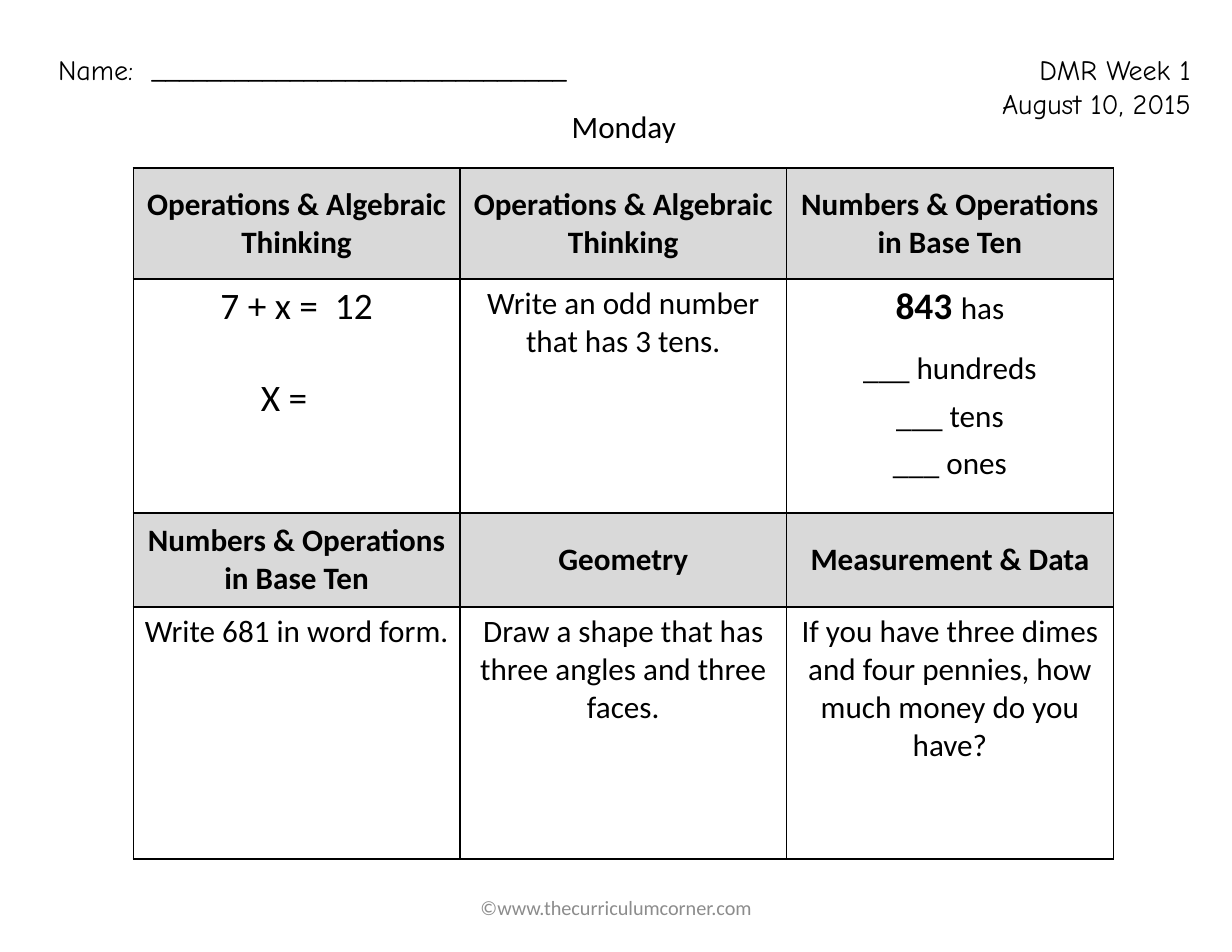
from dataclasses import dataclass

from lxml import etree
from pptx import Presentation
from pptx.dml.color import RGBColor
from pptx.enum.text import MSO_ANCHOR, PP_ALIGN
from pptx.oxml.ns import qn
from pptx.util import Inches, Pt

LEFT, CENTER, RIGHT = PP_ALIGN.LEFT, PP_ALIGN.CENTER, PP_ALIGN.RIGHT
TOP, MIDDLE = MSO_ANCHOR.TOP, MSO_ANCHOR.MIDDLE

COLORS = {"ink": "000000", "heading": "D9D9D9", "paper": "FFFFFF", "footer": "8C8C8C"}
BODY_FONT, HAND_FONT = "Calibri", "Comic Neue"
WIDTH, HEIGHT = Inches(11), Inches(8.5)
GRID_COLUMNS, GRID_ROWS = 44, 34
TABLE_COLUMNS = 3
TABLE_WIDTH = 35


@dataclass(frozen=True)
class Span:
    text: str
    size: float = 20
    bold: bool = False


@dataclass(frozen=True)
class Line:
    spans: tuple[Span, ...]
    before: float = 0
    after: float = 0
    right_indent: float = 0


@dataclass(frozen=True)
class Problem:
    heading: str
    lines: tuple[Line, ...]


def plain(text: str, size: float = 20, **spacing: float) -> Line:
    return Line((Span(text, size),), **spacing)


PROBLEM_ROWS = (
    (
        Problem("Operations & Algebraic Thinking", (
            plain("7 + x =  12", 24),
            plain("X =", 24, before=29.3, right_indent=0.9),
        )),
        Problem("Operations & Algebraic Thinking", (
            plain("Write an odd number that has 3 tens."),
        )),
        Problem("Numbers & Operations in Base Ten", (
            Line((Span("843 ", 24, True), Span("has"))),
            plain("___ hundreds", before=12.8, after=6),
            plain("___ tens", after=6),
            plain("___ ones", after=6),
        )),
    ),
    (
        Problem("Numbers & Operations in Base Ten", (plain("Write 681 in word form."),)),
        Problem("Geometry", (
            plain("Draw a shape that has three angles and three faces."),
        )),
        Problem("Measurement & Data", (
            plain("If you have three dimes and four pennies, how much money do you have?"),
        )),
    ),
)
ROW_HEIGHTS = (3.96, 8.36, 3.36, 9)


def across(columns: float) -> int:
    return round(WIDTH * columns / GRID_COLUMNS)


def down(rows: float) -> int:
    return round(HEIGHT * rows / GRID_ROWS)


def place(shape, left: float, top: float, width: float, height: float) -> None:
    shape.left, shape.top = across(left), down(top)
    shape.width, shape.height = across(width), down(height)


def write(frame, lines: tuple[Line, ...], *, font: str = BODY_FONT,
          color: str = "ink", align=LEFT) -> None:
    for index, line in enumerate(lines):
        para = frame.add_paragraph() if index else frame.paragraphs[0]
        para.alignment = align
        para.space_before, para.space_after = Pt(line.before), Pt(line.after)
        if line.right_indent:
            para._p.get_or_add_pPr().set("marR", str(across(line.right_indent)))
        for span in line.spans:
            run = para.add_run()
            run.text = span.text
            run.font.name = font
            run.font.size = Pt(span.size)
            run.font.bold = span.bold
            run.font.color.rgb = RGBColor.from_string(COLORS[color])


def add_label(page, area: tuple[float, ...], lines: tuple[Line, ...], *,
              wrap: bool = False, anchor=TOP, **text_format) -> None:
    box = page.shapes.add_textbox(0, 0, 0, 0)
    place(box, *area)
    box.text_frame.word_wrap = wrap
    box.text_frame.vertical_anchor = anchor
    write(box.text_frame, lines, **text_format)


def add_title(page, area: tuple[float, ...], text: str) -> None:
    title = page.shapes.title
    place(title, *area)
    title.text_frame.word_wrap = False
    title.text_frame.vertical_anchor = TOP
    write(title.text_frame, (plain(text),), align=CENTER)


def format_cell(cell, lines: tuple[Line, ...], fill: str, anchor) -> None:
    properties = cell._tc.get_or_add_tcPr()
    for side in ("a:lnL", "a:lnR", "a:lnT", "a:lnB"):
        border = etree.SubElement(properties, qn(side), w=str(Pt(1)))
        paint = etree.SubElement(border, qn("a:solidFill"))
        etree.SubElement(paint, qn("a:srgbClr"), val=COLORS["ink"])
    cell.fill.solid()
    cell.fill.fore_color.rgb = RGBColor.from_string(COLORS[fill])
    cell.vertical_anchor = anchor
    write(cell.text_frame, lines, align=CENTER)


def add_problems(page, left: float, top: float) -> None:
    table = page.shapes.add_table(
        len(ROW_HEIGHTS), TABLE_COLUMNS, across(left), down(top),
        across(TABLE_WIDTH), down(sum(ROW_HEIGHTS))).table
    for column in table.columns:
        column.width = across(TABLE_WIDTH / TABLE_COLUMNS)
    for row, height in zip(table.rows, ROW_HEIGHTS):
        row.height = down(height)
    for group, problems in enumerate(PROBLEM_ROWS):
        for column, problem in enumerate(problems):
            heading = (Line((Span(problem.heading, bold=True),)),)
            format_cell(table.cell(2 * group, column), heading, "heading", MIDDLE)
            format_cell(table.cell(2 * group + 1, column), problem.lines, "paper", TOP)


def main() -> None:
    deck = Presentation()
    deck.slide_width, deck.slide_height = WIDTH, HEIGHT
    page = deck.slides.add_slide(deck.slide_layouts[5])
    add_label(page, (1.68, 1.68, 23.32, 1.6),
              (plain("Name:  ______________________________", 18),), font=HAND_FONT)
    add_label(page, (34.56, 1.68, 8.36, 2.84),
              (plain("DMR Week 1", 18), plain("August 10, 2015", 18)),
              font=HAND_FONT, align=RIGHT)
    add_title(page, (20, 3.64, 4.56, 1.76), "Monday")
    add_problems(page, 4.76, 6)
    add_label(page, (15.04, 31.52, 13.92, 1.8),
              (plain("©www.thecurriculumcorner.com", 13),),
              wrap=True, anchor=MIDDLE, color="footer", align=CENTER)
    deck.save("out.pptx")


if __name__ == "__main__":
    main()
